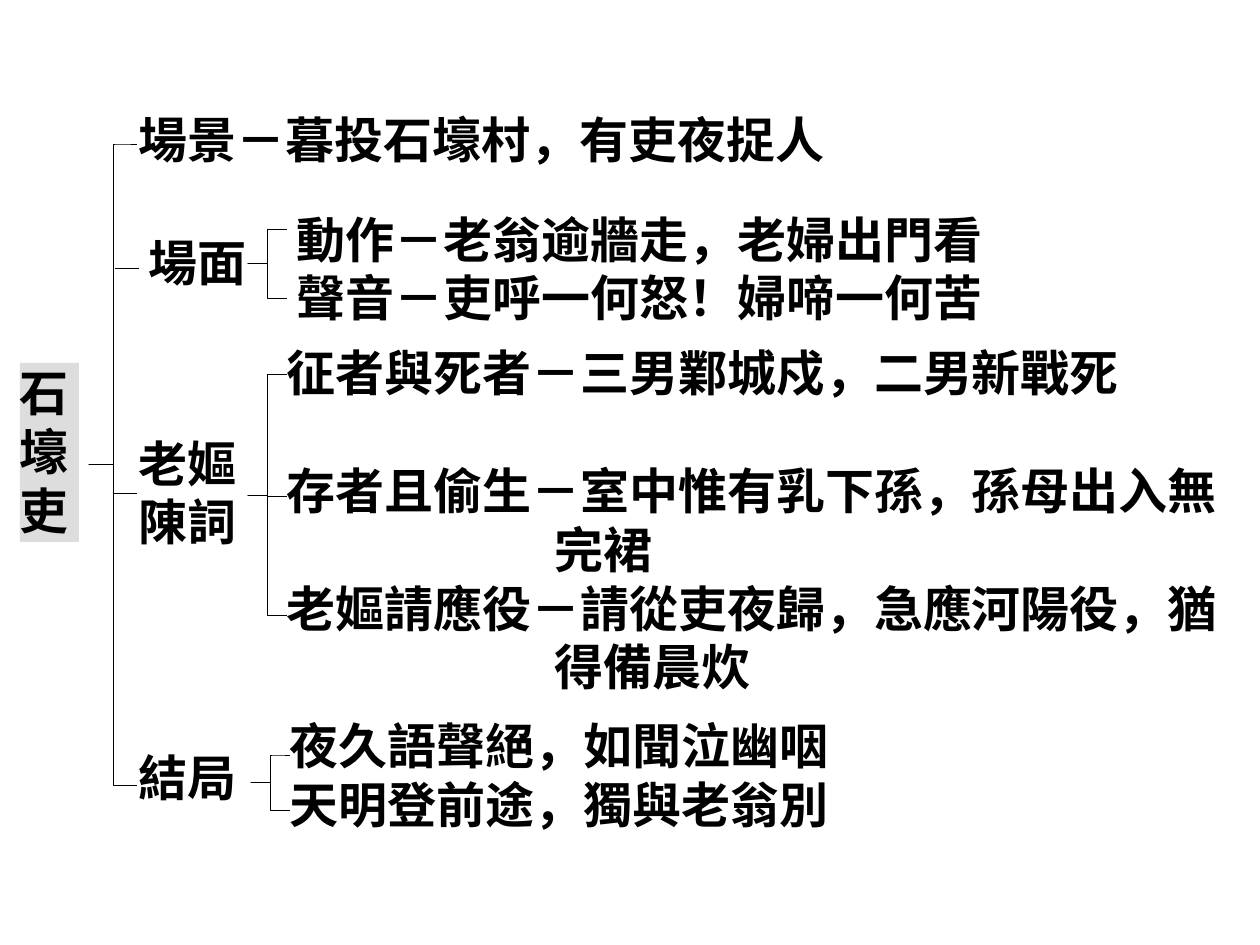
"""Build a tree outline slide of the poem 石壕吏."""
import pptx
import pptx.dml.color
import pptx.enum.shapes
import pptx.enum.text
import pptx.oxml
import pptx.util

BLACK = pptx.dml.color.RGBColor(0x00, 0x00, 0x00)
GREY = pptx.dml.color.RGBColor(0xDD, 0xDD, 0xDD)
PX = 914400 // 126
LINE_WIDTH = pptx.util.Pt(0.5)
BLANK_LINE = pptx.util.Pt(33.5)
HANGING_INDENT = 268
SERIF = "Times New Roman"
SANS = "Arial"


def to_emu(*lengths):
    return [length * PX for length in lengths]


def write_lines(shape, lines, font_name=SERIF):
    frame = shape.text_frame
    frame.word_wrap = True
    frame.vertical_anchor = pptx.enum.text.MSO_ANCHOR.TOP
    frame.margin_left = frame.margin_right = 0
    frame.margin_top = frame.margin_bottom = 0
    frame.text = "\n".join(lines)
    for paragraph in frame.paragraphs:
        paragraph.alignment = pptx.enum.text.PP_ALIGN.LEFT
        paragraph.font.name = font_name
        paragraph.font.size = pptx.util.Pt(28)
        paragraph.font.bold = True
        paragraph.font.color.rgb = BLACK
    return frame.paragraphs


def add_text(slide, box, *lines, font_name=SERIF):
    return write_lines(slide.shapes.add_textbox(*to_emu(*box)), lines, font_name)


def add_title(slide, box, title):
    shape = slide.shapes.add_shape(
        pptx.enum.shapes.MSO_SHAPE.RECTANGLE, *to_emu(*box))
    shape.shadow.inherit = False
    shape.fill.solid()
    shape.fill.fore_color.rgb = GREY
    shape.line.fill.background()
    write_lines(shape, [title])


def add_brace(slide, box):
    brace = slide.shapes.add_shape(
        pptx.enum.shapes.MSO_SHAPE.LEFT_BRACE, *to_emu(*box))
    brace.shadow.inherit = False
    brace.adjustments[0] = 0
    brace.adjustments[1] = 0.5
    brace.fill.background()
    brace.line.color.rgb = BLACK
    brace.line.width = LINE_WIDTH


def add_branch(slide, left, right, y):
    branch = slide.shapes.add_connector(
        pptx.enum.shapes.MSO_CONNECTOR.STRAIGHT, *to_emu(left, y, right, y))
    branch.line.color.rgb = BLACK
    branch.line.width = LINE_WIDTH
    properties = branch.element.spPr
    properties.append(pptx.oxml.parse_xml(
        '<a:effectLst xmlns:a="http://schemas.openxmlformats.org/drawingml/2006/main"/>'))


def add_speech(slide, box):
    paragraphs = add_text(
        slide, box,
        "征者與死者－三男鄴城戍，二男新戰死",
        "存者且偷生－室中惟有乳下孫，孫母出入無",
        "完裙",
        "老嫗請應役－請從吏夜歸，急應河陽役，猶",
        "得備晨炊")
    paragraphs[1].space_before = BLANK_LINE
    for paragraph in (paragraphs[2], paragraphs[4]):
        paragraph._p.get_or_add_pPr().set("marL", str(HANGING_INDENT * PX))


def main():
    presentation = pptx.Presentation()
    presentation.slide_width, presentation.slide_height = to_emu(1260, 945)
    slide = presentation.slides.add_slide(presentation.slide_layouts[6])

    add_title(slide, (20, 363, 59, 179), "石壕吏")
    for box in ((89, 144, 48, 641), (248, 229, 39, 69),
                (248, 375, 39, 241), (251, 755, 39, 55)):
        add_brace(slide, box)
    for left, right, y in ((115, 139, 268), (113, 137, 493), (267, 287, 496)):
        add_branch(slide, left, right, y)

    add_text(slide, (139, 110, 987, 68), "場景－暮投石壕村，有吏夜捉人")
    add_text(slide, (149, 232, 125, 67), "場面")
    add_text(slide, (297, 209, 872, 144),
             "動作－老翁逾牆走，老婦出門看", "聲音－吏呼一何怒！婦啼一何苦")
    add_text(slide, (139, 433, 137, 67), "老嫗陳詞")
    add_speech(slide, (287, 343, 978, 348))
    add_text(slide, (139, 748, 110, 67), "結局")
    add_text(slide, (290, 716, 544, 115),
             "夜久語聲絕，如聞泣幽咽", "天明登前途，獨與老翁別", font_name=SANS)
    presentation.save("out.pptx")


if __name__ == "__main__":
    main()
